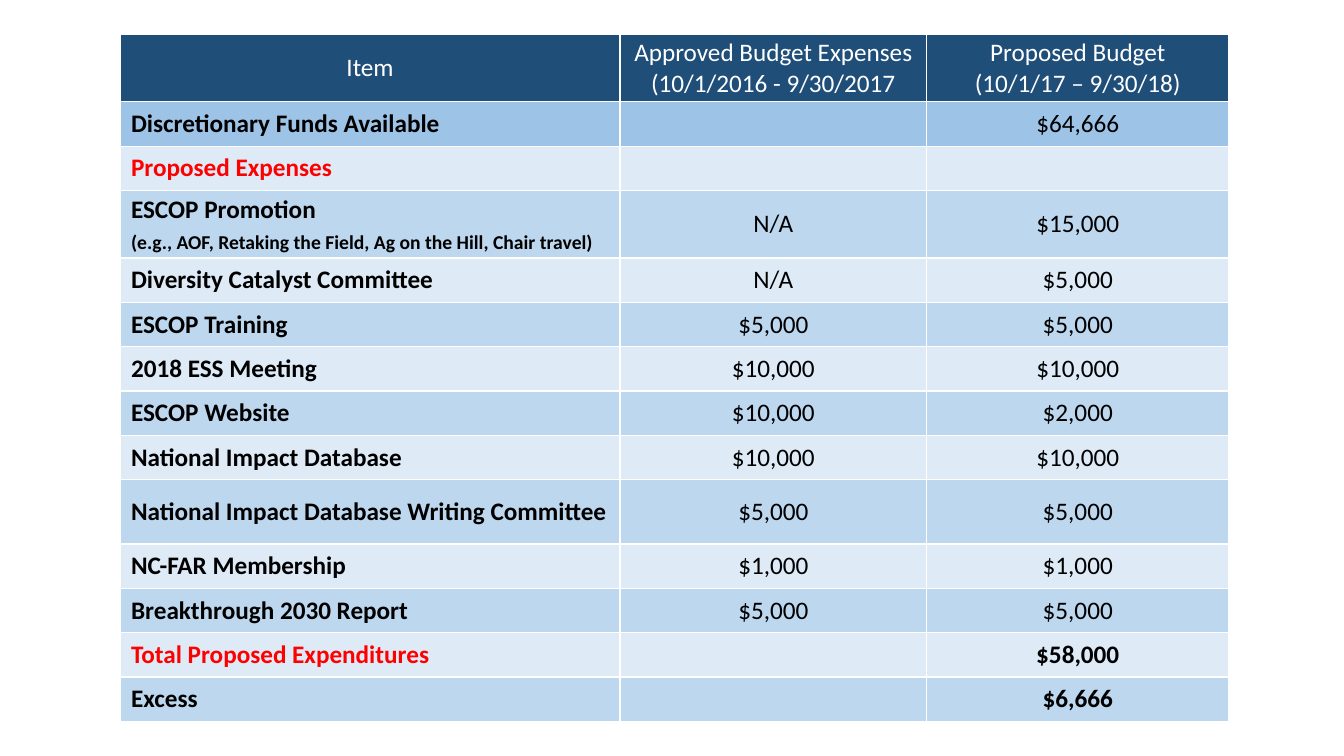
from dataclasses import dataclass

from lxml import etree
from pptx import Presentation
from pptx.dml.color import RGBColor
from pptx.enum.text import MSO_ANCHOR, PP_ALIGN
from pptx.oxml.ns import qn
from pptx.util import Inches, Pt

LEFT, CENTER = PP_ALIGN.LEFT, PP_ALIGN.CENTER
MIDDLE = MSO_ANCHOR.MIDDLE
BLANK_LAYOUT = 6


@dataclass(frozen=True)
class Theme:
    """Colours, font and type sizes of the slide."""
    font: str = "Calibri"
    body: int = 18
    note: int = 14
    header_fill: str = "1F4E79"
    funds_fill: str = "9DC3E6"
    light_fill: str = "DEEBF7"
    medium_fill: str = "BDD7EE"
    white: str = "FFFFFF"
    black: str = "000000"
    red: str = "FF0000"


THEME = Theme()
HEADER = (
    "Item",
    "Approved Budget Expenses\n(10/1/2016 - 9/30/2017",
    "Proposed Budget\n(10/1/17 – 9/30/18)",
)
PROMOTION_NOTE = "(e.g., AOF, Retaking the Field, Ag on the Hill, Chair travel)"
BUDGET = (
    ("Discretionary Funds Available", "", "$64,666"),
    ("Proposed Expenses", "", ""),
    ("ESCOP Promotion", "N/A", "$15,000"),
    ("Diversity Catalyst Committee", "N/A", "$5,000"),
    ("ESCOP Training", "$5,000", "$5,000"),
    ("2018 ESS Meeting", "$10,000", "$10,000"),
    ("ESCOP Website", "$10,000", "$2,000"),
    ("National Impact Database", "$10,000", "$10,000"),
    ("National Impact Database Writing Committee", "$5,000", "$5,000"),
    ("NC-FAR Membership", "$1,000", "$1,000"),
    ("Breakthrough 2030 Report", "$5,000", "$5,000"),
    ("Total Proposed Expenditures", "", "$58,000"),
    ("Excess", "", "$6,666"),
)
RED_ITEMS = {"Proposed Expenses", "Total Proposed Expenditures"}
BOLD_TOTALS = {"Total Proposed Expenditures", "Excess"}
COLUMN_WIDTHS = (4.96, 3.04, 3)
ROW_HEIGHT = 0.44
TALL_ROWS = {0: 0.67, 3: 0.67, 9: 0.64}


def write_para(para, text, *, size=THEME.body, color=THEME.black, bold=False,
               align=CENTER, before=0):
    """Write one formatted span of text into a paragraph."""
    para.alignment = align
    para.space_before = Pt(before)
    span = para.add_run()
    span.text = text
    span.font.name = THEME.font
    span.font.size = Pt(size)
    span.font.bold = bold
    span.font.color.rgb = RGBColor.from_string(color)


def add_borders(cell):
    """Draw a thin white line on all four sides of a cell."""
    properties = cell._tc.get_or_add_tcPr()
    for side in ("a:lnL", "a:lnR", "a:lnT", "a:lnB"):
        line = etree.SubElement(properties, qn(side), w=str(Pt(1)))
        fill = etree.SubElement(line, qn("a:solidFill"))
        etree.SubElement(fill, qn("a:srgbClr"), val=THEME.white)


def fill_cell(cell, text, fill, *, indent=0, **text_format):
    """Set the border, fill and text of a cell."""
    add_borders(cell)
    cell.fill.solid()
    cell.fill.fore_color.rgb = RGBColor.from_string(fill)
    cell.margin_left = Inches(indent)
    cell.margin_right = cell.margin_top = cell.margin_bottom = 0
    cell.vertical_anchor = MIDDLE
    frame = cell.text_frame
    for index, line in enumerate(text.split("\n")):
        para = frame.add_paragraph() if index else frame.paragraphs[0]
        write_para(para, line, **text_format)


def row_fill(row):
    """Return the fill of a budget row."""
    if row == 1:
        return THEME.funds_fill
    return THEME.medium_fill if row % 2 else THEME.light_fill


def add_budget_table(page):
    """Add the table with its column widths and row heights."""
    heights = [TALL_ROWS.get(row, ROW_HEIGHT) for row in range(len(BUDGET) + 1)]
    table = page.shapes.add_table(
        len(heights), len(COLUMN_WIDTHS), Inches(1.19), Inches(0.34),
        Inches(sum(COLUMN_WIDTHS)), Inches(sum(heights))).table
    table.first_row = table.horz_banding = False
    for column, width in zip(table.columns, COLUMN_WIDTHS):
        column.width = Inches(width)
    for row, height in zip(table.rows, heights):
        row.height = Inches(height)
    return table


def fill_budget_table(table):
    """Write the header and the budget rows."""
    for column, label in enumerate(HEADER):
        fill_cell(table.cell(0, column), label, THEME.header_fill, color=THEME.white)
    for row, (item, *amounts) in enumerate(BUDGET, start=1):
        fill = row_fill(row)
        color = THEME.red if item in RED_ITEMS else THEME.black
        item_cell = table.cell(row, 0)
        fill_cell(item_cell, item, fill, indent=0.11, color=color, bold=True, align=LEFT)
        if item == "ESCOP Promotion":
            write_para(item_cell.text_frame.add_paragraph(), PROMOTION_NOTE,
                       size=THEME.note, bold=True, align=LEFT, before=4)
        for column, amount in enumerate(amounts, start=1):
            fill_cell(table.cell(row, column), amount, fill, bold=item in BOLD_TOTALS)


def main():
    """Build the budget slide and save the deck."""
    deck = Presentation()
    deck.slide_width, deck.slide_height = Inches(13.33), Inches(7.5)
    page = deck.slides.add_slide(deck.slide_layouts[BLANK_LAYOUT])
    fill_budget_table(add_budget_table(page))
    deck.save("out.pptx")


if __name__ == "__main__":
    main()
